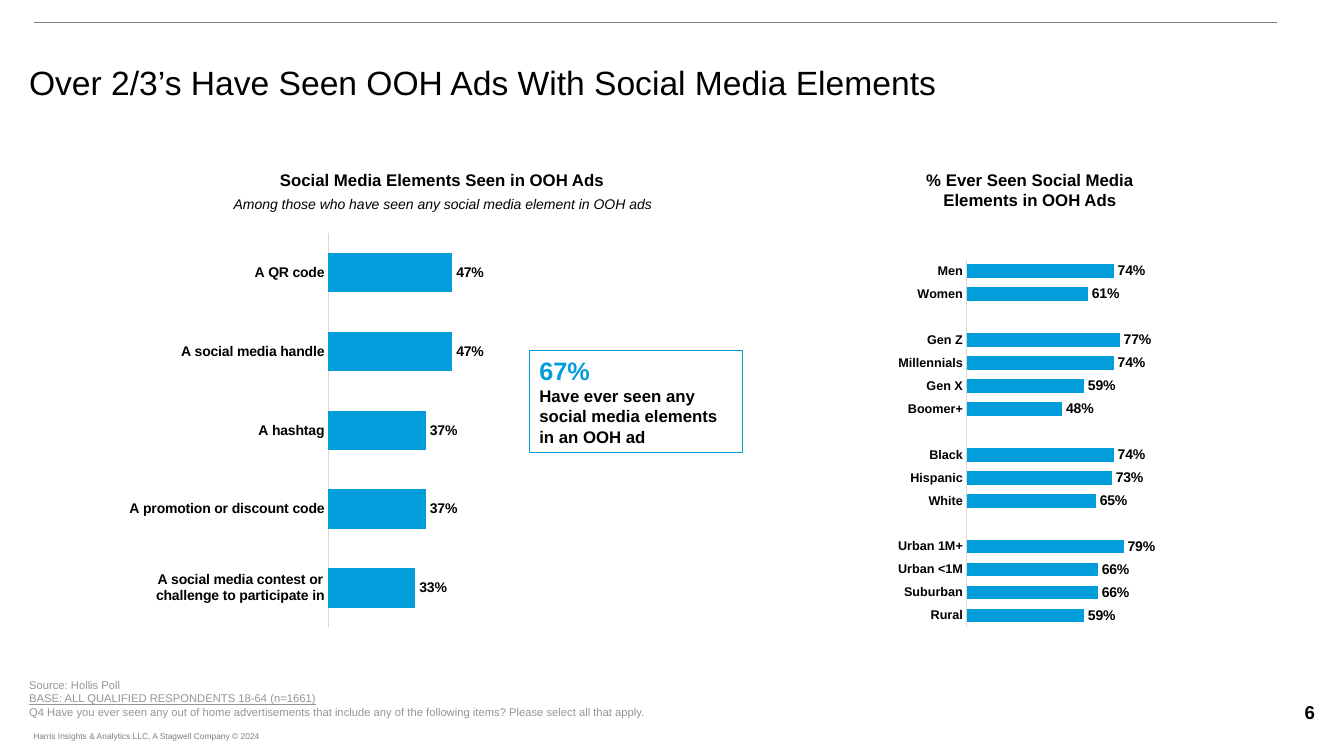
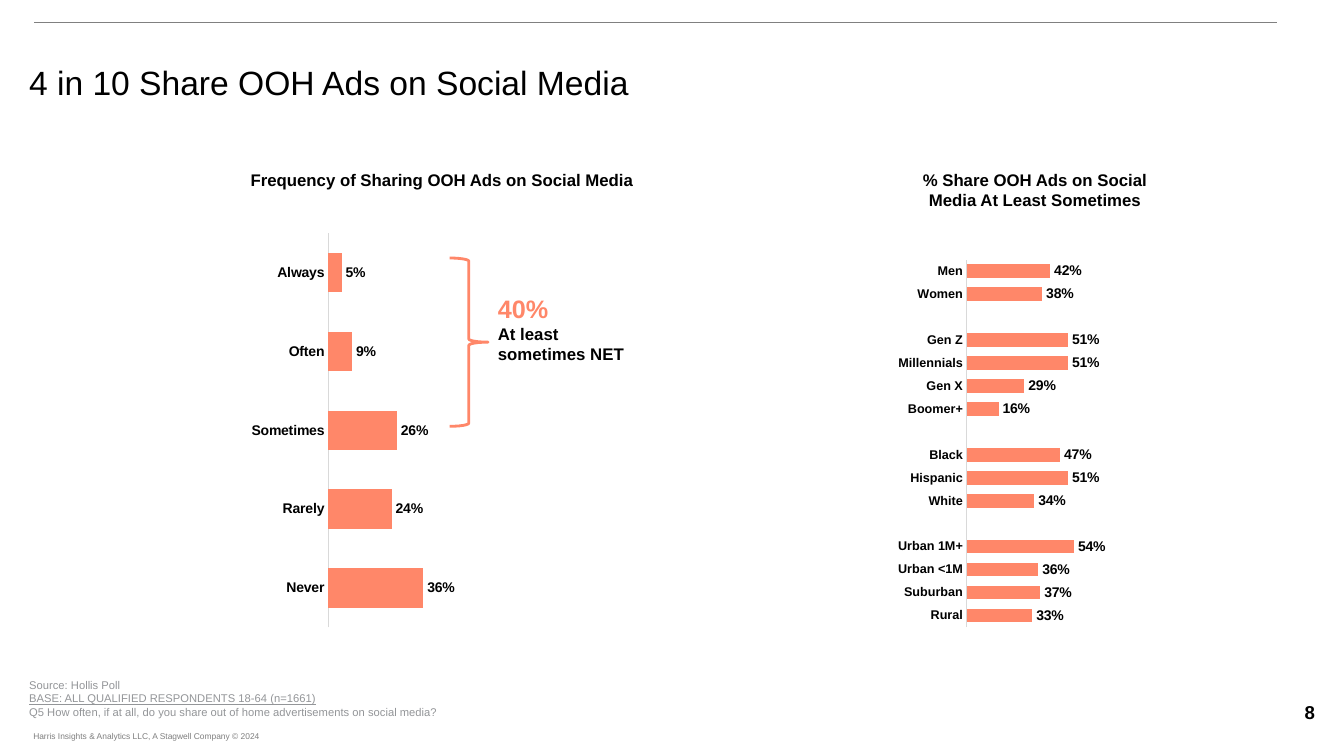
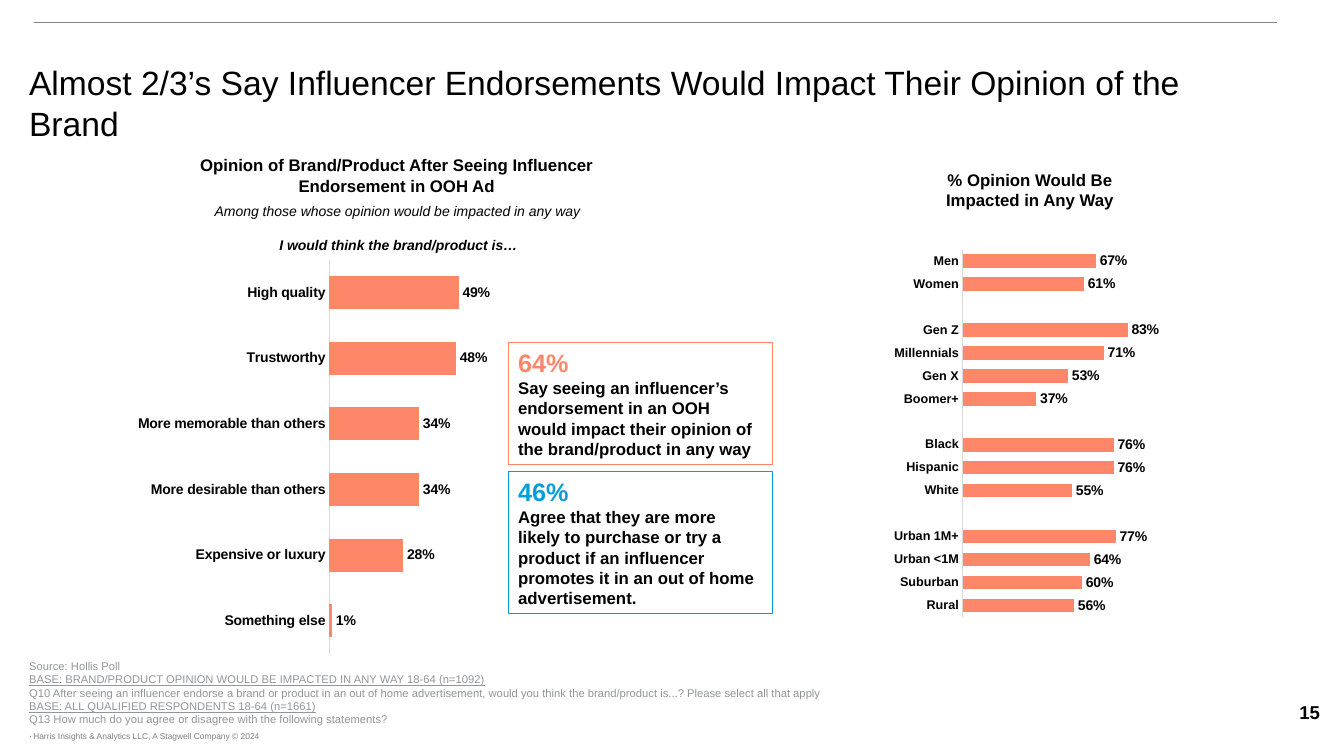
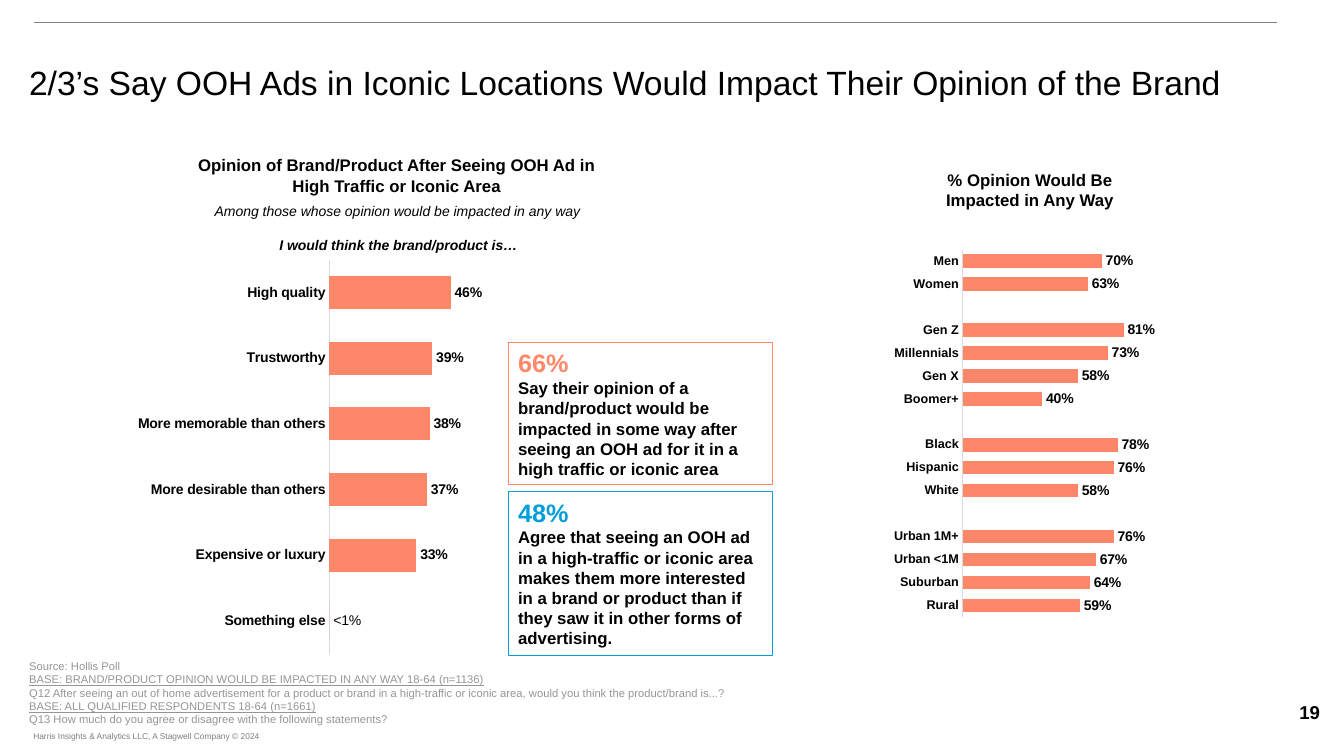
from lxml import etree
from pptx import Presentation
from pptx import util as u
from pptx.chart.data import CategoryChartData
from pptx.dml.color import RGBColor
from pptx.enum import chart as charts, shapes, text
from pptx.oxml import parse_xml
from pptx.oxml.ns import nsdecls, qn

BLACK = RGBColor(0x00, 0x00, 0x00)
BLUE = RGBColor(0x01, 0x9E, 0xDB)
CORAL = RGBColor(0xFF, 0x87, 0x69)
NOTE_GREY = RGBColor(0x93, 0x95, 0x98)
FOOTER_GREY = RGBColor(0x7F, 0x7F, 0x7F)
RULE_GREY = RGBColor(0x80, 0x80, 0x80)
AXIS_GREY = RGBColor(0xD9, 0xD9, 0xD9)

FONT = "Arial"
TITLE = {"size": 24}
HEADING = {"size": 12, "bold": True}
SUBHEADING = {"size": 10, "italic": True}
LEAD_IN = {"size": 10, "bold": True, "italic": True}
NOTE = {"size": 8, "color": NOTE_GREY}
UNDERLINED_NOTE = {**NOTE, "underline": True}
FOOTER = {"size": 6, "color": FOOTER_GREY}
PAGE_NUMBER = {"size": 13.3, "bold": True}
CHART_TEXT = {"size": 10, "bold": True}
GROUP_TEXT = {"size": 9, "bold": True}

CENTER = text.PP_ALIGN.CENTER
LEFT = text.PP_ALIGN.LEFT

GROUPS = ["Men", "Women", "", "Gen Z", "Millennials", "Gen X", "Boomer+", "",
          "Black", "Hispanic", "White", "", "Urban 1M+", "Urban <1M", "Suburban", "Rural"]
QUALITIES = ["High quality", "Trustworthy", "More memorable than others",
             "More desirable than others", "Expensive or luxury", "Something else"]
ALL_BASE = "BASE: ALL QUALIFIED RESPONDENTS 18-64 (n=1661)"
AGREEMENT = "Q13 How much do you agree or disagree with the following statements?"


def inches(box):
    return [u.Inches(length) for length in box]


def style(font, values):
    values = {"name": FONT, "color": BLACK, **values}
    for name, value in values.items():
        if name == "color":
            font.color.rgb = value
        else:
            setattr(font, name, u.Pt(value) if name == "size" else value)


def write(shape, lines, align=LEFT):
    frame = shape.text_frame
    frame.word_wrap = True
    frame.vertical_anchor = text.MSO_ANCHOR.TOP
    for index, (words, values) in enumerate(lines):
        para = frame.add_paragraph() if index else frame.paragraphs[0]
        para.alignment = align
        span = para.add_run()
        span.text = words
        style(span.font, values)


def add_text(page, box, lines, align=LEFT):
    shape = page.shapes.add_textbox(*inches(box))
    write(shape, lines, align)
    return shape


def add_outline(page, kind, box, colour, width):
    shape = page.shapes.add_shape(kind, *inches(box))
    shape.shadow.inherit = False
    shape.fill.background()
    shape.line.color.rgb = colour
    shape.line.width = u.Pt(width)
    return shape


def figure(share, claim, colour):
    return [(share, {"size": 18, "bold": True, "color": colour}), (claim, HEADING)]


def add_callout(page, box, share, claim, colour):
    shape = add_outline(page, shapes.MSO_SHAPE.RECTANGLE, box, colour, 0.75)
    write(shape, figure(share, claim, colour))


def set_plot_area(chart, box):
    parts = "".join(f'<c:{name}Mode val="edge"/>' for name in "xy")
    parts += "".join(f'<c:{name} val="{value}"/>' for name, value in zip("xywh", box))
    plot_area = chart._chartSpace.chart.plotArea
    for layout in plot_area.findall(qn("c:layout")):
        plot_area.remove(layout)
    plot_area.insert(0, parse_xml(
        f'<c:layout {nsdecls("c")}><c:manualLayout><c:layoutTarget val="inner"/>'
        f'{parts}</c:manualLayout></c:layout>'))


def add_bars(page, box, names, values, colour, gap, label_text, plot_box):
    data = CategoryChartData(number_format="0%")
    data.categories = names
    data.add_series("Series 1", values)
    chart = page.shapes.add_chart(
        charts.XL_CHART_TYPE.BAR_CLUSTERED, *inches(box), data).chart
    chart.has_legend = False
    chart.has_title = False
    style(chart.font, HEADING)

    scale = chart.value_axis
    scale.visible = False
    scale.has_major_gridlines = False
    scale.minimum_scale, scale.maximum_scale = 0, 1

    axis = chart.category_axis
    axis.reverse_order = True
    axis.major_tick_mark = charts.XL_TICK_MARK.NONE
    axis.format.line.color.rgb = AXIS_GREY
    axis.format.line.width = u.Pt(0.75)
    style(axis.tick_labels.font, label_text)

    plot = chart.plots[0]
    plot.gap_width = gap
    plot.vary_by_categories = False
    series = plot.series[0]
    series.format.fill.solid()
    series.format.fill.fore_color.rgb = colour
    labels = series.data_labels
    labels.show_value = True
    labels.number_format = "0%"
    labels.number_format_is_linked = False
    labels.position = charts.XL_LABEL_POSITION.OUTSIDE_END
    style(labels.font, CHART_TEXT)
    set_plot_area(chart, plot_box)
    return series


def add_answers(page, left, top, names, values, colour):
    return add_bars(page, (left, top, 5.13, 3.92), names, values, colour,
                    100, CHART_TEXT, (0.44, 0, 0.51, 1))


def add_groups(page, left, top, heading, values, colour, heading_width=2.41):
    add_text(page, (9.01, 1.63, heading_width, 0.5), [(heading, HEADING)], CENTER)
    add_bars(page, (left, top, 4.02, 3.92), GROUPS, values, colour,
             70, GROUP_TEXT, (0.47, 0.04, 0.49, 0.93))


def add_notes(page, top, lines):
    lines = ["Source: Hollis Poll", *lines]
    add_text(page, (0.19, top, 10.12, 0.5),
             [(line, UNDERLINED_NOTE if line.startswith("BASE") else NOTE) for line in lines])


def add_page(deck, title, number):
    page = deck.slides.add_slide(deck.slide_layouts[6])
    rule = page.shapes.add_connector(
        shapes.MSO_CONNECTOR.STRAIGHT, *inches((0.34, 0.22, 12.67, 0.22)))
    rule.line.color.rgb = RULE_GREY
    rule.line.width = u.Pt(0.5)
    etree.SubElement(rule._element.spPr, qn("a:effectLst"))
    add_text(page, (12.48, 6.9, 1.02, 0.33), [(number, PAGE_NUMBER)], CENTER)
    footer = add_text(page, (0.33, 7.2, 2.39, 0.2),
                      [("Harris Insights & Analytics LLC, A Stagwell Company © 2024", FOOTER)])
    footer.text_frame.margin_left = 0
    add_text(page, (0.19, 0.57, 12.47, 0.47), [(title, TITLE)])
    return page


def add_survey_page(deck, title, number, heading, names, values, colour,
                    group_heading, group_values, group_width, question):
    page = add_page(deck, title, number)
    add_text(page, (2.26, 1.63, 4.25, 0.3), [(heading, HEADING)], CENTER)
    add_answers(page, 1, 2.31, names, values, colour)
    add_groups(page, 7.7, 2.42, group_heading, group_values, colour, group_width)
    add_notes(page, 6.68, [ALL_BASE, question])
    return page


def add_opinion_page(deck, title, number, heading, values, group_values, callouts, notes):
    page = add_page(deck, title, number)
    add_text(page, (1.81, 1.49, 4.25, 0.5), [(heading, HEADING)], CENTER)
    add_text(page, (1, 1.96, 5.88, 0.27),
             [("Among those whose opinion would be impacted in any way", SUBHEADING)], CENTER)
    add_text(page, (1.01, 2.3, 5.88, 0.27),
             [("I would think the brand/product is…", LEAD_IN)], CENTER)
    series = add_answers(page, 1.01, 2.57, QUALITIES, values, CORAL)
    add_groups(page, 7.66, 2.32, "% Opinion Would Be Impacted in Any Way", group_values, CORAL)
    top = 3.4
    for (share, claim, height), colour in zip(callouts, (CORAL, BLUE)):
        add_callout(page, (5.04, top, 2.62, height), share, claim, colour)
        top += height + 0.07
    add_notes(page, 6.49, notes)
    return series


def label_point(series, index, words):
    label = series.points[index].data_label
    span = label.text_frame.paragraphs[0].add_run()
    span.text = words
    style(span.font, {"size": 10, "bold": False})
    label.position = charts.XL_LABEL_POSITION.OUTSIDE_END


def main():
    deck = Presentation()
    deck.slide_width, deck.slide_height = inches((13.33, 7.5))

    page = add_survey_page(
        deck, "Over 2/3’s Have Seen OOH Ads With Social Media Elements", "6",
        "Social Media Elements Seen in OOH Ads",
        ["A QR code", "A social media handle", "A hashtag", "A promotion or discount code",
         "A social media contest or challenge to participate in"],
        [0.47, 0.47, 0.37, 0.37, 0.33], BLUE,
        "% Ever Seen Social Media Elements in OOH Ads",
        [0.74, 0.61, None, 0.77, 0.74, 0.59, 0.48, None,
         0.74, 0.73, 0.65, None, 0.79, 0.66, 0.66, 0.59], 2.41,
        "Q4 Have you ever seen any out of home advertisements that include any of the "
        "following items? Please select all that apply.")
    add_text(page, (1.91, 1.89, 4.96, 0.27),
             [("Among those who have seen any social media element in OOH ads", SUBHEADING)], CENTER)
    add_callout(page, (5.25, 3.48, 2.11, 1.01), "67%",
                "Have ever seen any social media elements in an OOH ad", BLUE)

    page = add_survey_page(
        deck, "4 in 10 Share OOH Ads on Social Media", "8",
        "Frequency of Sharing OOH Ads on Social Media",
        ["Always", "Often", "Sometimes", "Rarely", "Never"],
        [0.05, 0.09, 0.26, 0.24, 0.36], CORAL,
        "% Share OOH Ads on Social Media At Least Sometimes",
        [0.42, 0.38, None, 0.51, 0.51, 0.29, 0.16, None,
         0.47, 0.51, 0.34, None, 0.54, 0.36, 0.37, 0.33], 2.51,
        "Q5 How often, if at all, do you share out of home advertisements on social media?")
    add_outline(page, shapes.MSO_SHAPE.RIGHT_BRACE, (4.46, 2.56, 0.38, 1.67), CORAL, 2)
    add_text(page, (4.84, 2.86, 1.57, 0.81), figure("40%", "At least sometimes NET", CORAL))

    add_opinion_page(
        deck, "Almost 2/3’s Say Influencer Endorsements Would Impact Their Opinion of the Brand",
        "15", "Opinion of Brand/Product After Seeing Influencer Endorsement in OOH Ad",
        [0.49, 0.48, 0.34, 0.34, 0.28, 0.01],
        [0.67, 0.61, None, 0.83, 0.71, 0.53, 0.37, None,
         0.76, 0.76, 0.55, None, 0.77, 0.64, 0.6, 0.56],
        [("64%", "Say seeing an influencer’s endorsement in an OOH would impact their "
                 "opinion of the brand/product in any way", 1.21),
         ("46%", "Agree that they are more likely to purchase or try a product if an "
                 "influencer promotes it in an out of home advertisement.", 1.41)],
        ["BASE: BRAND/PRODUCT OPINION WOULD BE IMPACTED IN ANY WAY 18-64 (n=1092)",
         "Q10 After seeing an influencer endorse a brand or product in an out of home "
         "advertisement, would you think the brand/product is...? Please select all that apply",
         ALL_BASE, AGREEMENT, "."])

    series = add_opinion_page(
        deck, "2/3’s Say OOH Ads in Iconic Locations Would Impact Their Opinion of the Brand",
        "19", "Opinion of Brand/Product After Seeing OOH Ad in High Traffic or Iconic Area",
        [0.46, 0.39, 0.38, 0.37, 0.33, 0],
        [0.7, 0.63, None, 0.81, 0.73, 0.58, 0.4, None,
         0.78, 0.76, 0.58, None, 0.76, 0.67, 0.64, 0.59],
        [("66%", "Say their opinion of a brand/product would be impacted in some way after "
                 "seeing an OOH ad for it in a high traffic or iconic area", 1.41),
         ("48%", "Agree that seeing an OOH ad in a high-traffic or iconic area makes them more "
                 "interested in a brand or product than if they saw it in other forms of "
                 "advertising.", 1.62)],
        ["BASE: BRAND/PRODUCT OPINION WOULD BE IMPACTED IN ANY WAY 18-64 (n=1136)",
         "Q12 After seeing an out of home advertisement for a product or brand in a "
         "high-traffic or iconic area, would you think the product/brand is...?",
         ALL_BASE, AGREEMENT])
    label_point(series, 5, "<1%")

    deck.save("out.pptx")


if __name__ == "__main__":
    main()
